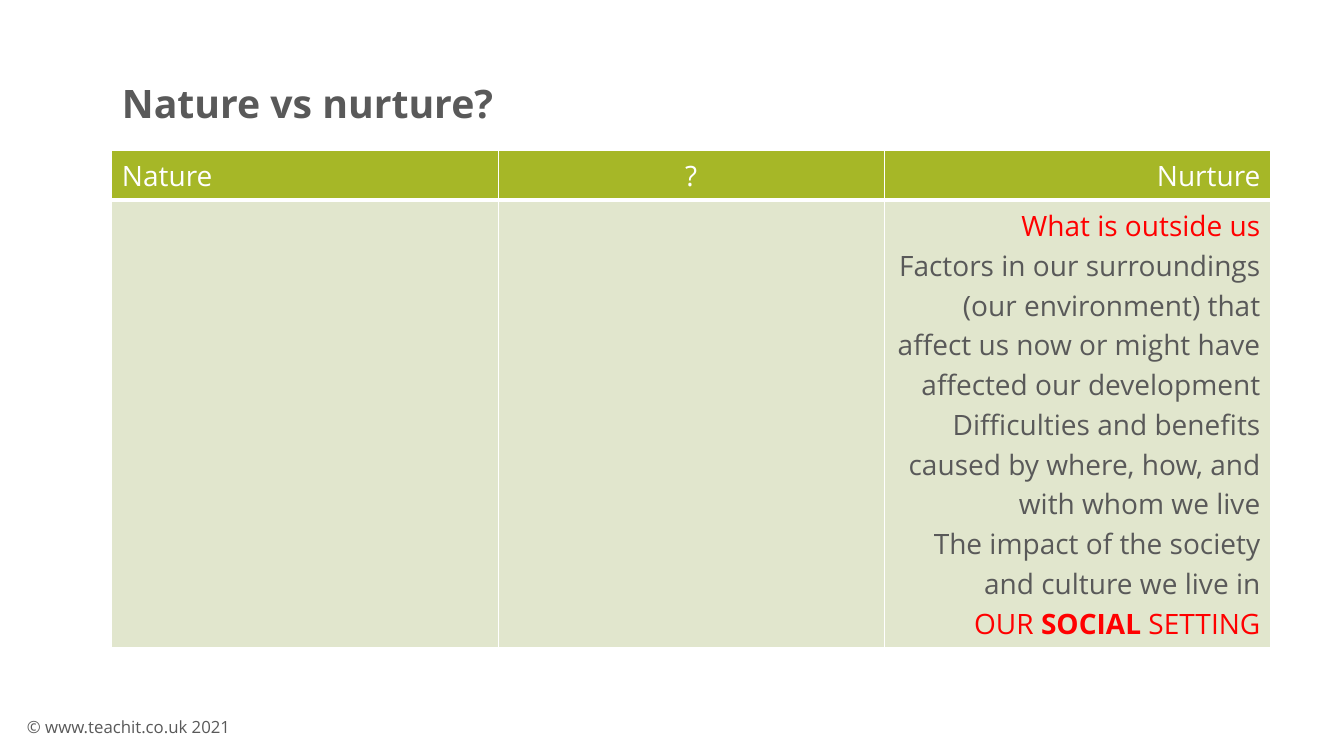
"""Build the slide "Nature vs nurture?" with its three-column table."""
from lxml.etree import SubElement as Sub
from pptx import Presentation
from pptx.dml.color import RGBColor as Rgb
from pptx.enum.text import MSO_ANCHOR as Anchor, MSO_AUTO_SIZE as Fit, PP_ALIGN as Align
from pptx.oxml.ns import qn
from pptx.util import Cm, Pt

WHITE, GREY, RED, GREEN, PALE = "FFFFFF", "595959", "FF0000", "A6B727", "E1E6CD"


def write(para, text, size, color, align=Align.LEFT, space=None, bold=False):
    """Fill a paragraph; parts between asterisks switch the weight."""
    look = {"alignment": align, "line_spacing": space, "space_before": Pt(0)}
    for key, value in look.items():
        setattr(para, key, value)
    for i, part in enumerate(text.split("*")):
        run = para.add_run()
        run.text = part
        form = {"name": "Open Sans", "size": Pt(size), "bold": bold or i % 2 == 1}
        for key, value in form.items():
            setattr(run.font, key, value)
        run.font.color.rgb = Rgb.from_string(color)


def paint(cell, color, base):
    """Give a cell white borders and a plain fill."""
    props = cell._tc.get_or_add_tcPr()
    for side, width in {"L": 1, "R": 1, "T": 1, "B": base}.items():
        line = Sub(props, qn(f"a:ln{side}"), w=str(Pt(width)))
        Sub(Sub(line, qn("a:solidFill")), qn("a:srgbClr"), val=WHITE)
    cell.fill.solid()
    cell.fill.fore_color.rgb = Rgb.from_string(color)


deck = Presentation()
deck.slide_width, deck.slide_height = Cm(33.87), Cm(19.05)
slide = deck.slides.add_slide(deck.slide_layouts[5])

title = slide.shapes.title
place = {"left": Cm(2.82), "top": Cm(2.13), "width": Cm(24.16), "height": Cm(1.19)}
for key, value in place.items():
    setattr(title, key, value)
frame = title.text_frame
for key, value in {"vertical_anchor": Anchor.BOTTOM, "auto_size": Fit.NONE, "word_wrap": True}.items():
    setattr(frame, key, value)
write(frame.paragraphs[0], "Nature vs nurture?", 28, GREY, space=Pt(36.8), bold=True)

heads = [("Nature", Align.LEFT), ("?", Align.CENTER), ("Nurture", Align.RIGHT)]
points = [
    ("What is outside us", RED),
    ("Factors in our surroundings (our environment) that affect us now "
     "or might have affected our development", GREY),
    ("Difficulties and benefits caused by where, how, and with whom we live", GREY),
    ("The impact of the society and culture we live in", GREY),
    ("OUR *SOCIAL* SETTING", RED),
]
tall = [Cm(1.25), Cm(11.26)]
table = slide.shapes.add_table(2, 3, Cm(2.82), Cm(3.78), Cm(29.2), sum(tall)).table
for row, height in zip(table.rows, tall):
    row.height = height
for col, (head, align) in enumerate(heads):
    top = table.cell(0, col)
    paint(top, GREEN, 3)
    paint(table.cell(1, col), PALE, 1)
    write(top.text_frame.paragraphs[0], head, 20, WHITE, align, Pt(28.4))

body = table.cell(1, 2).text_frame
for i, (text, color) in enumerate(points):
    para = body.add_paragraph() if i else body.paragraphs[0]
    write(para, text, 20, color, Align.RIGHT, Pt(28.4))

foot = slide.shapes.add_textbox(Cm(0.43), Cm(17.93), Cm(5.89), Cm(0.76)).text_frame
foot.word_wrap = True
write(foot.paragraphs[0], "© www.teachit.co.uk 2021", 12, GREY)

deck.save("out.pptx")
